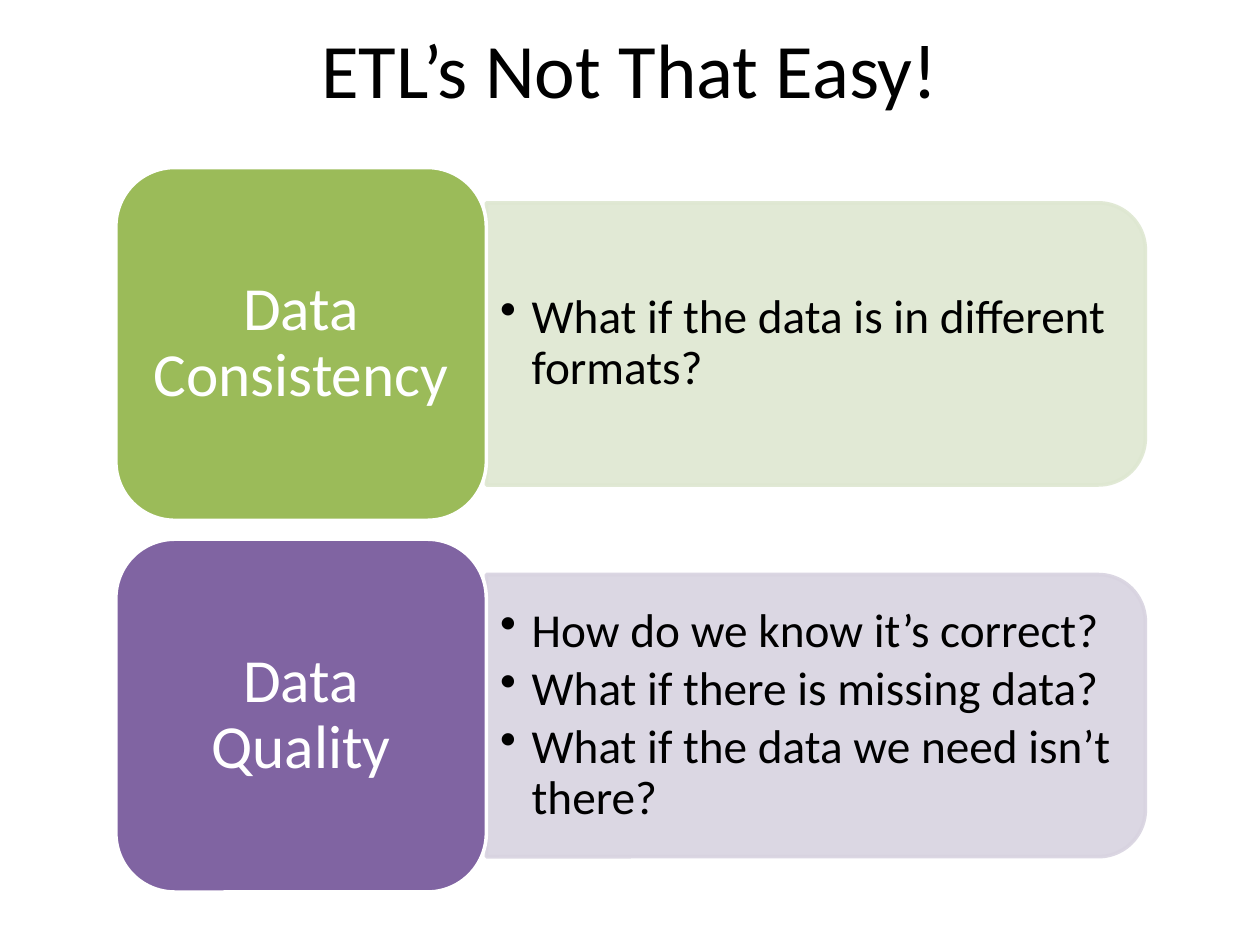
from lxml.etree import SubElement
from pptx import Presentation
from pptx.dml.color import RGBColor
from pptx.enum.shapes import MSO_SHAPE
from pptx.enum.text import MSO_ANCHOR, PP_ALIGN
from pptx.oxml.ns import qn
from pptx.util import Inches, Pt

TITLE = "ETL’s Not That Easy!"
ROWS = [
    ("Data Consistency", "9BBB59", "DEE7D1",
     ["What if the data is in different formats?"]),
    ("Data Quality", "8064A2", "D8D3E0",
     ["How do we know it’s correct?",
      "What if there is missing data?",
      "What if the data we need isn’t there?"]),
]
LEFT, TOP, PITCH = 0.92, 1.33, 2.95
TILE_W, TILE_H = 2.94, 2.8
BAND_W, BAND_H = 5.23, 2.24
TEXT_W, TEXT_H = 5.12, 2.02


def paint(shape, fill, line, alpha=None):
    shape.shadow.inherit = False
    shape.fill.solid()
    shape.fill.fore_color.rgb = RGBColor.from_string(fill)
    shape.line.color.rgb = RGBColor.from_string(line)
    shape.line.width = Pt(2)
    if alpha:
        for color in shape._element.spPr.iter(qn("a:srgbClr")):
            SubElement(color, qn("a:alpha"), val=str(alpha * 1000))


def write(shape, lines, size, color, inset=(0.1, 0.05), align=PP_ALIGN.CENTER,
          spacing=0.9, bullet=False):
    frame = shape.text_frame
    frame.word_wrap = True
    frame.vertical_anchor = MSO_ANCHOR.MIDDLE
    frame.margin_left = frame.margin_right = Inches(inset[0])
    frame.margin_top = frame.margin_bottom = Inches(inset[1])
    frame.text = "\n".join(lines)
    for para in frame.paragraphs:
        para.alignment = align
        para.line_spacing = spacing
        para.font.name = "Calibri"
        para.font.size = Pt(size)
        para.font.color.rgb = RGBColor.from_string(color)
        if bullet:
            para.space_after = Pt(4)
            props = para._p.get_or_add_pPr()
            props.set("marL", str(Inches(0.25)))
            props.set("indent", str(-Inches(0.25)))
            mark = SubElement(props, qn("a:buChar"), char="•")
            props.find(qn("a:defRPr")).addprevious(mark)


def add_row(shapes, top, label, dark, pale, points):
    edge, mid = LEFT + TILE_W, top + TILE_H / 2
    band = shapes.add_shape(
        MSO_SHAPE.ROUND_2_SAME_RECTANGLE,
        Inches(edge + (BAND_W - BAND_H) / 2), Inches(mid - BAND_W / 2),
        Inches(BAND_H), Inches(BAND_W))
    band.rotation = 90
    paint(band, pale, pale, 90)
    box = shapes.add_textbox(Inches(edge), Inches(mid - TEXT_H / 2),
                             Inches(TEXT_W), Inches(TEXT_H))
    write(box, points, 27, "000000", (0.11, 0.06), PP_ALIGN.LEFT, bullet=True)
    tile = shapes.add_shape(MSO_SHAPE.ROUNDED_RECTANGLE, Inches(LEFT),
                            Inches(top), Inches(TILE_W), Inches(TILE_H))
    paint(tile, dark, "FFFFFF")
    write(tile, [label], 35, "FFFFFF", (0.15, 0.07))


def main():
    """Build the slide: a title over rows of a labelled tile and its questions."""
    deck = Presentation()
    deck.slide_width, deck.slide_height = Inches(10), Inches(7.5)
    shapes = deck.slides.add_slide(deck.slide_layouts[6]).shapes
    title = shapes.add_textbox(Inches(0.5), 0, Inches(9), Inches(1.08))
    write(title, [TITLE], 44, "000000", spacing=1.0)
    for i, row in enumerate(ROWS):
        add_row(shapes, TOP + i * PITCH, *row)
    deck.save("out.pptx")


if __name__ == "__main__":
    main()
